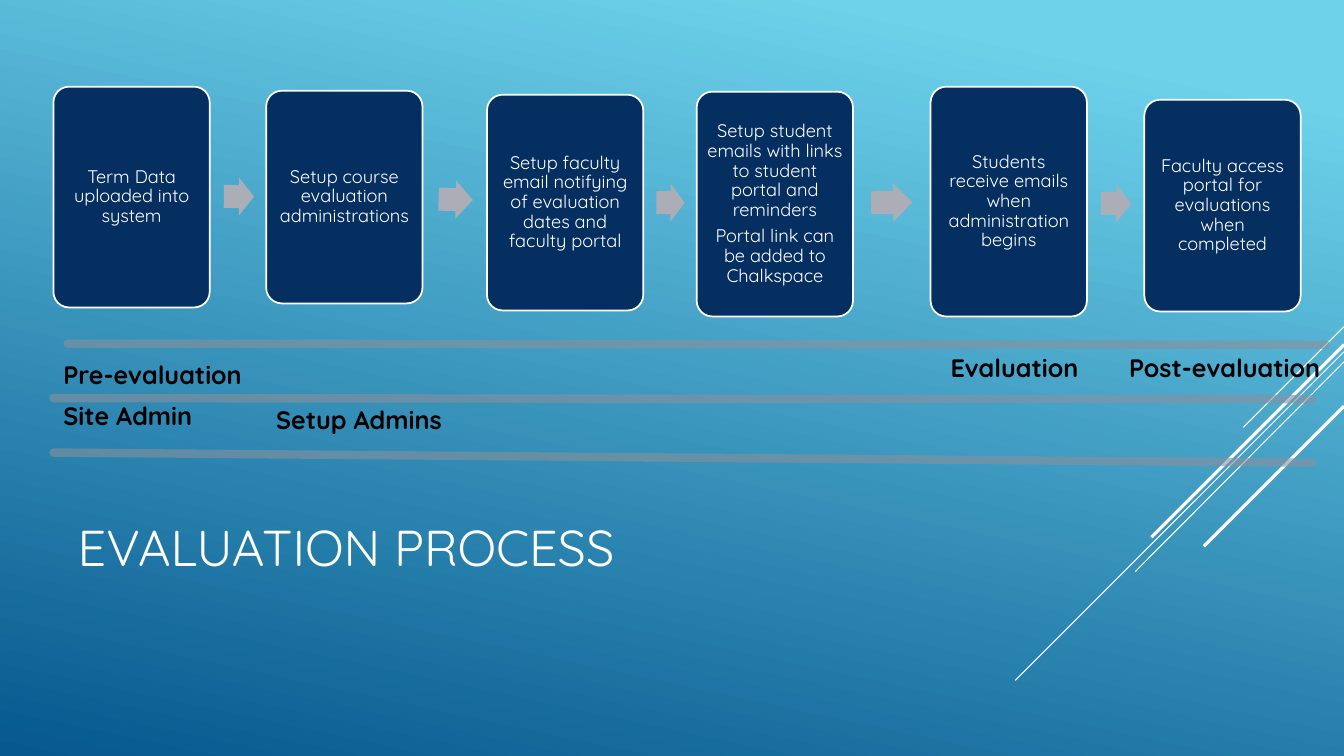
from dataclasses import dataclass

from lxml.etree import SubElement
from pptx import Presentation
from pptx.dml.color import RGBColor
from pptx.enum.shapes import MSO_CONNECTOR as Connector, MSO_SHAPE as Shape
from pptx.enum.text import MSO_ANCHOR as Anchor, MSO_AUTO_SIZE as AutoSize, PP_ALIGN as Align
from pptx.oxml.ns import qn
from pptx.util import Inches, Pt


@dataclass(frozen=True)
class Theme:
    font: str = "Quicksand"
    white: str = "FFFFFF"
    black: str = "000000"
    navy: str = "052F61"
    arrow: str = "ABADB7"
    divider: str = "89919C"
    sky: str = "6ED2EB"
    deep: str = "06588E"
    title_size: float = 36
    label_size: float = 18
    card_size: float = 13


THEME = Theme()
TITLE = "EVALUATION PROCESS"
CARD_WIDTH = 1.55
ARROW_HEIGHT = 0.38

STEPS = [
    (0.53, 0.86, 2.19, ["Term Data uploaded into system"]),
    (2.64, 0.9, 2.11, ["Setup course evaluation administrations"]),
    (4.83, 0.94, 2.14, ["Setup faculty email notifying of evaluation dates and faculty portal"]),
    (6.91, 0.91, 2.23, ["Setup student emails with links to student portal and reminders",
                        "Portal link can be added to Chalkspace"]),
    (9.23, 0.86, 2.28, ["Students receive emails when administration begins"]),
    (11.35, 0.99, 2.1, ["Faculty access portal for evaluations when completed"]),
]
ARROWS = [
    (2.22, 1.76, 0.3, 0.3),
    (4.35, 1.79, 0.34, 1.3),
    (6.51, 1.82, 0.28, 0.5),
    (8.64, 1.82, 0.41, 359.4),
    (10.92, 1.83, 0.3, 1),
]
LABELS = [
    ("Pre-evaluation", 0.53, 3.52, 2.07),
    ("Site Admin", 0.53, 3.92, 1.68),
    ("Setup Admins", 2.64, 3.96, 8.89),
    ("Evaluation", 9.33, 3.45, 1.77),
    ("Post-evaluation", 11.1, 3.45, 2.13),
]
DIVIDERS = [
    (0.67, 3.41, 13.15, 3.42),
    (0.53, 3.95, 13.01, 3.96),
    (0.53, 4.49, 13.01, 4.59),
]
STREAKS = [
    (13.33, 3.24, 12.33, 4.24, 0.75),
    (13.33, 3.49, 10.07, 6.75, 0.75),
    (13.33, 3.59, 11.26, 5.67, 0.75),
    (13.33, 3.42, 11.42, 5.33, 2.25),
    (13.33, 4.03, 11.94, 5.42, 2.25),
]


def color(value):
    return RGBColor.from_string(value)


def style_text(frame, size, ink, bold=False, align=Align.LEFT):
    for para in frame.paragraphs:
        para.alignment = align
        for span in para.runs:
            span.font.name = THEME.font
            span.font.size = Pt(size)
            span.font.bold = bold
            span.font.color.rgb = color(ink)


def paint_background(page):
    fill = page.background.fill
    fill.gradient()
    fill.gradient_angle = 258
    stops = [(0.1, THEME.sky), (1, THEME.deep)]
    for stop, (position, shade) in zip(fill.gradient_stops, stops):
        stop.position = position
        stop.color.rgb = color(shade)


def add_line(page, ends, ink, width):
    line = page.shapes.add_connector(Connector.STRAIGHT, *map(Inches, ends))
    line.line.color.rgb = color(ink)
    line.line.width = Pt(width)
    SubElement(line._element.spPr, qn("a:effectLst"))
    return line


def add_divider(page, ends):
    stroke = add_line(page, ends, THEME.divider, 6).line._ln
    stroke.set("cap", "rnd")
    SubElement(stroke.find(".//" + qn("a:srgbClr")), qn("a:alpha"), val="60000")


def add_block(page, kind, bounds, ink):
    block = page.shapes.add_shape(kind, *map(Inches, bounds))
    block.shadow.inherit = False
    block.fill.solid()
    block.fill.fore_color.rgb = color(ink)
    return block


def add_card(page, left, top, height, lines):
    card = add_block(page, Shape.ROUNDED_RECTANGLE, (left, top, CARD_WIDTH, height), THEME.navy)
    card.adjustments[0] = 0.1
    card.line.color.rgb = color(THEME.white)
    card.line.width = Pt(1.25)
    frame = card.text_frame
    frame.word_wrap = True
    frame.vertical_anchor = Anchor.MIDDLE
    frame.margin_left = frame.margin_right = Inches(0.05)
    frame.margin_top = frame.margin_bottom = Inches(0.05)
    frame.text = "\n".join(lines)
    style_text(frame, THEME.card_size, THEME.white, align=Align.CENTER)
    for para in frame.paragraphs:
        para.line_spacing = 0.9
        para.space_after = Pt(THEME.card_size * 0.35)


def add_arrow(page, left, top, width, turn):
    arrow = add_block(page, Shape.RIGHT_ARROW, (left, top, width, ARROW_HEIGHT), THEME.arrow)
    arrow.adjustments[0] = 0.6
    arrow.adjustments[1] = 0.5
    arrow.rotation = turn
    arrow.line.fill.background()


def add_label(page, text, left, top, width):
    box = page.shapes.add_textbox(*map(Inches, (left, top, width, 0.4)))
    frame = box.text_frame
    frame.word_wrap = True
    frame.auto_size = AutoSize.SHAPE_TO_FIT_TEXT
    frame.text = text
    style_text(frame, THEME.label_size, THEME.black, bold=True)


def set_title(page):
    title = page.shapes.title
    title.left, title.top, title.width, title.height = map(Inches, (0.67, 4.6, 9.33, 1.65))
    frame = title.text_frame
    frame.text = TITLE
    frame.vertical_anchor = Anchor.MIDDLE
    frame.auto_size = AutoSize.NONE
    style_text(frame, THEME.title_size, THEME.white)


def main():
    deck = Presentation()
    deck.slide_width, deck.slide_height = Inches(13.33), Inches(7.5)
    page = deck.slides.add_slide(deck.slide_layouts[5])
    paint_background(page)
    set_title(page)
    for *ends, width in STREAKS:
        add_line(page, ends, THEME.white, width)
    for step in STEPS:
        add_card(page, *step)
    for arrow in ARROWS:
        add_arrow(page, *arrow)
    for ends in DIVIDERS:
        add_divider(page, ends)
    for label in LABELS:
        add_label(page, *label)
    deck.save("out.pptx")


if __name__ == "__main__":
    main()
